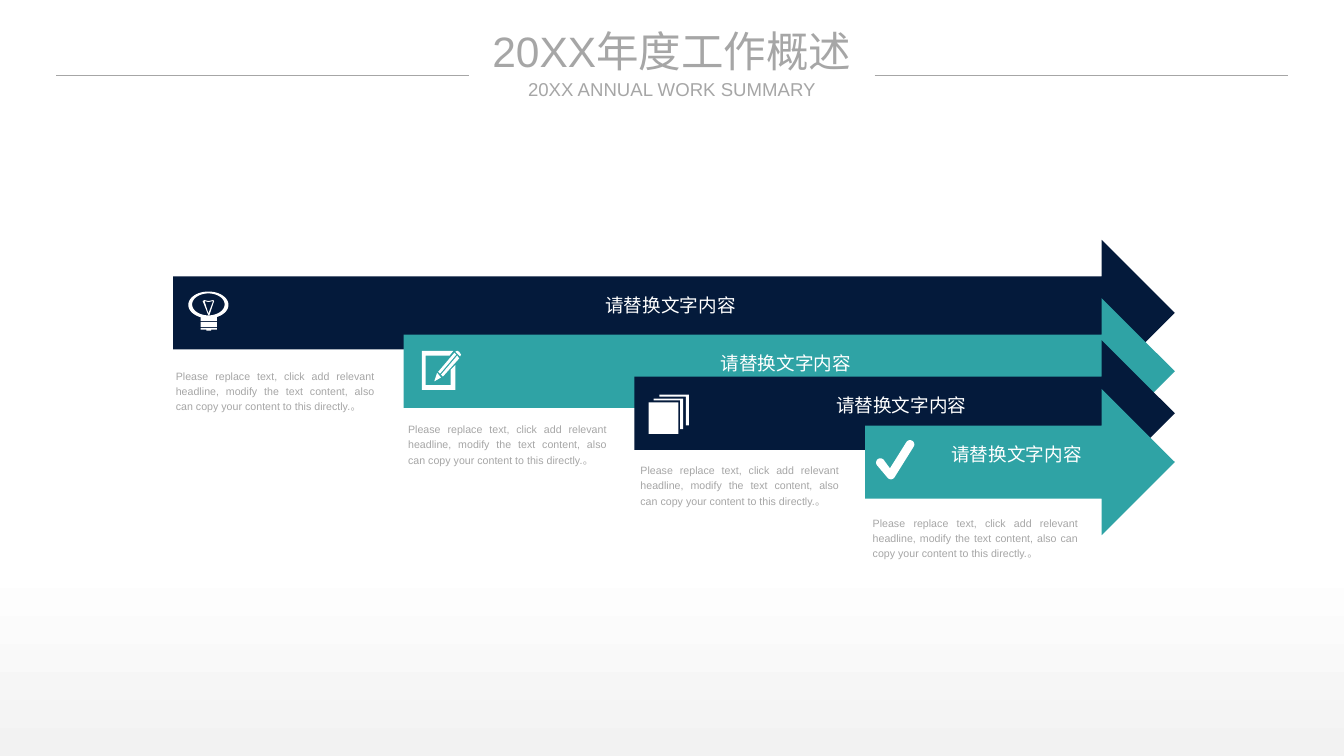
from dataclasses import dataclass
from math import cos, radians, sin

from pptx import Presentation
from pptx import util as u
from pptx.dml.color import RGBColor
from pptx.enum import shapes, text
from pptx.oxml import xmlchemy
from pptx.util import Inches


@dataclass(frozen=True)
class Theme:
    navy: str = "041A3B"
    teal: str = "2FA3A5"
    grey: str = "A6A6A6"
    white: str = "FFFFFF"
    mist: str = "F2F2F2"
    font: str = "Arial"
    title: int = 32
    label: int = 14
    caption: int = 8


THEME = Theme()
WIDTH, HEIGHT = 14.06, 7.91
TIP = 12.29
LABEL = "请替换文字内容"
CAPTION = ("Please replace text, click add relevant headline, modify the text "
           "content, also can copy your content to this directly.。")


def place(sp, box):
    for name, value in zip(("left", "top", "width", "height"), box):
        setattr(sp, name, Inches(value))


def write(sp, words, size, color, align="CENTER", anchor="MIDDLE",
          spacing=1.0, margins=(0, 0, 0, 0)):
    """Fill a shape with one formatted paragraph; margins run left, top, right, bottom."""
    tf = sp.text_frame
    frame = {"word_wrap": True, "auto_size": text.MSO_AUTO_SIZE.NONE,
             "vertical_anchor": text.MSO_ANCHOR[anchor]}
    for side, value in zip(("left", "top", "right", "bottom"), margins):
        frame["margin_" + side] = Inches(value)
    for name, value in frame.items():
        setattr(tf, name, value)
    p = tf.paragraphs[0]
    for name, value in {"alignment": text.PP_ALIGN[align], "line_spacing": spacing,
                        "space_before": u.Pt(0)}.items():
        setattr(p, name, value)
    r = p.add_run()
    r.text = words
    for name, value in {"name": THEME.font, "size": u.Pt(size)}.items():
        setattr(r.font, name, value)
    r.font.color.rgb = RGBColor.from_string(color)


def paint(sp, color):
    sp.shadow.inherit = False
    sp.fill.solid()
    sp.fill.fore_color.rgb = RGBColor.from_string(color)
    sp.line.fill.background()
    return sp


def outline(tree, x, y, *contours, color=THEME.white):
    """Draw closed contours, given in inches from (x, y), as one filled shape."""
    builder = None
    for contour in contours:
        points = [(Inches(x + dx), Inches(y + dy)) for dx, dy in contour]
        if builder is None:
            builder = tree.build_freeform(*points[0])
        else:
            builder.move_to(*points[0])
        builder.add_line_segments(points[1:], close=True)
    return paint(builder.convert_to_shape(), color)


def arc(cx, cy, rx, ry, start, end, steps=12):
    """Points along an elliptical arc; angles in degrees, clockwise."""
    angles = [radians(start + (end - start) * i / steps) for i in range(steps + 1)]
    return [(cx + rx * cos(a), cy + ry * sin(a)) for a in angles]


def bulb_icon(tree, x, y):
    outline(tree, x, y, arc(0.21, 0.14, 0.21, 0.14, 0, 360, 48),
            arc(0.21, 0.135, 0.17, 0.115, 0, 360, 48))
    for top in (0.26, 0.32):
        bar = tree.add_shape(shapes.MSO_SHAPE.RECTANGLE, 0, 0, 0, 0)
        place(paint(bar, THEME.white), (x + 0.13, y + top, 0.17, 0.05))
    outline(tree, x, y, [(0.13, 0.38), (0.3, 0.38), (0.3, 0.4), (0.24, 0.4),
                         (0.24, 0.41), (0.19, 0.41), (0.19, 0.4), (0.13, 0.4)])
    outline(tree, x, y, [(0.15, 0.1), (0.17, 0.09), (0.21, 0.1), (0.26, 0.09),
                         (0.27, 0.1), (0.22, 0.25), (0.21, 0.25)],
            [(0.21, 0.23), (0.17, 0.1), (0.21, 0.11), (0.26, 0.1)])


def edit_icon(tree, x, y):
    for contour in (
            [(0.13, 0.33), (0.16, 0.24), (0.2, 0.29)],
            [(0.34, 0.03), (0.17, 0.23), (0.19, 0.25), (0.36, 0.05)],
            [(0.2, 0.26), (0.22, 0.28), (0.39, 0.09), (0.37, 0.06)],
            [(0.35, 0.02), (0.37, 0.01), (0.39, 0.02), (0.41, 0.05), (0.4, 0.07)],
            [(0.3, 0.37), (0.04, 0.37), (0.04, 0.06), (0.29, 0.06), (0.33, 0.01),
             (0, 0.01), (0, 0.42), (0.35, 0.42), (0.35, 0.16), (0.3, 0.21)]):
        outline(tree, x, y, contour)


def pages_icon(tree, x, y):
    for dx, dy in ((0.05, 0.04), (0.11, 0)):
        outline(tree, x + dx, y + dy, [(0, 0), (0.31, 0), (0.31, 0.32), (0.28, 0.32),
                                       (0.28, 0.02), (0, 0.02)])
    sheet = tree.add_shape(shapes.MSO_SHAPE.RECTANGLE, 0, 0, 0, 0)
    place(paint(sheet, THEME.white), (x, y + 0.08, 0.31, 0.33))


def tick_icon(tree, x, y):
    r = 0.045
    outline(tree, x, y, arc(0.05, 0.24, r, r, -40, -220) + arc(0.16, 0.37, r, r, 140, 32)
            + arc(0.36, 0.05, r, r, 32, -148) + [(0.15, 0.3)])


def arrow(s, box, color, icon, offset):
    """Labelled right arrow that fills the box, with its icon at an offset."""
    x, y, w, h = box
    neck, top, bottom = w - h / 2, h / 4, h * 3 / 4
    sp = outline(s.shapes, x, y, [(0, top), (neck, top), (neck, 0), (w, h / 2),
                                  (neck, h), (neck, bottom), (0, bottom)], color=color)
    write(sp, LABEL, THEME.label, THEME.white, spacing=1.2,
          margins=(0.59, 0.41, 0.66, 0.62))
    icon(s.shapes.add_group_shape().shapes, x + offset[0], y + offset[1])


def caption(s, box):
    sp = s.shapes.add_textbox(*map(Inches, box))
    write(sp, CAPTION, THEME.caption, THEME.grey, "JUSTIFY", "TOP", 1.2,
          (0.11, 0.05, 0.11, 0.05))


def rule(s, x, y, length):
    line = s.shapes.add_connector(shapes.MSO_CONNECTOR.STRAIGHT, Inches(x), Inches(y),
                                  Inches(x + length), Inches(y))
    line.line.color.rgb = RGBColor.from_string(THEME.grey)
    line.line.width = u.Pt(1)
    sp_pr = line._element.spPr
    sp_pr.append(xmlchemy.OxmlElement("a:effectLst"))


def header(s, box):
    """Title and subtitle centred in the box, with a rule on either side."""
    x, y, w, h = box
    title, subtitle = s.placeholders
    for sp, words, size, width, top, height in (
            (title, "20XX年度工作概述", THEME.title, 4.32, 0, 0.54),
            (subtitle, "20XX ANNUAL WORK SUMMARY", THEME.label, 3.07, 0.55, 0.24)):
        place(sp, (x + (w - width) / 2, y + top, width, height))
        write(sp, words, size, THEME.grey)
    length = 4.32
    for left in (x, x + w - length):
        rule(s, left, y + 0.53, length)


def backdrop(s):
    fill = s.background.fill
    fill.gradient()
    fill.gradient_angle = 90
    for stop, color, position in zip(fill.gradient_stops, (THEME.mist, THEME.white),
                                     (0, 0.26)):
        stop.color.rgb = RGBColor.from_string(color)
        stop.position = position


def arrows(s, box):
    """Staggered arrows that share one tip line, each with a caption below."""
    x, y, w, h = box
    steps = ((0, 1.28, 2.3, bulb_icon, (0.16, 0.54)),
             (0.61, 1.84, 2.3, edit_icon, (0.19, 0.54)),
             (1.05, 2.27, 2.3, pages_icon, (0.15, 0.57)),
             (1.56, 2.82, 2.37, tick_icon, (0.11, 0.53)))
    for i, (_, top, width, _, _) in enumerate(steps):
        caption(s, (x - 0.08 + 2.43 * i, y + top, width, 0.58))
    for i, (top, _, _, icon, offset) in enumerate(steps):
        indent = 7.24 * i / 3
        color = (THEME.navy, THEME.teal)[i % 2]
        arrow(s, (x + indent, y + top, w - indent, h - 1.56), color, icon, offset)


def main():
    prs = Presentation()
    prs.slide_width, prs.slide_height = Inches(WIDTH), Inches(HEIGHT)
    s = prs.slides.add_slide(prs.slide_layouts[0])
    backdrop(s)
    arrows(s, (1.81, 2.51, TIP - 1.81, 3.09))
    header(s, (0.59, 0.26, 12.88, 0.79))
    prs.save("out.pptx")


if __name__ == "__main__":
    main()
